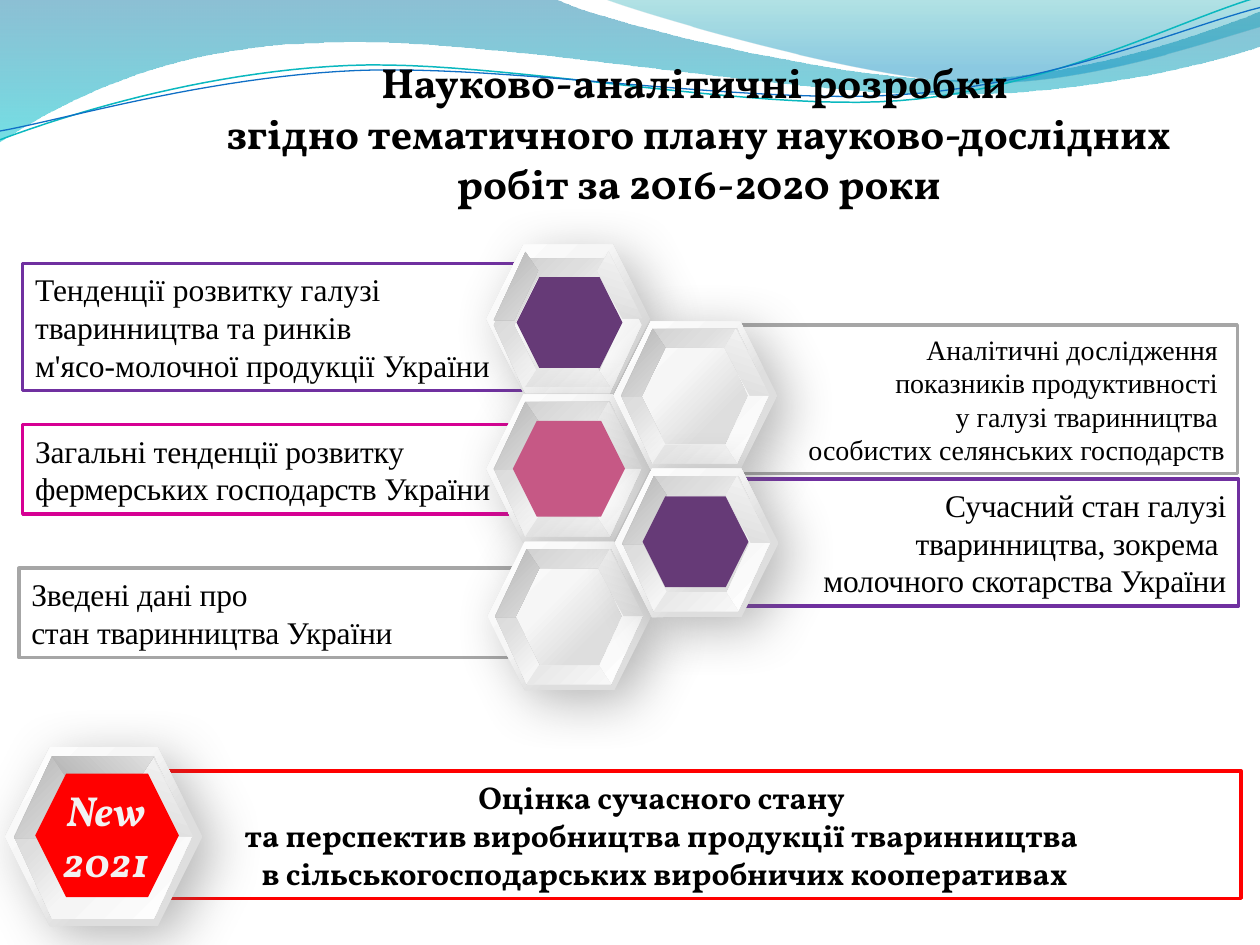
import lxml.etree
import pptx
import pptx.dml.color
import pptx.enum.shapes
import pptx.enum.text
import pptx.oxml.ns
import pptx.util

Inches, Pt = pptx.util.Inches, pptx.util.Pt
RGB = pptx.dml.color.RGBColor.from_string
MSO = pptx.enum.shapes.MSO_SHAPE
ALIGN = pptx.enum.text.PP_ALIGN
ANCHOR = pptx.enum.text.MSO_ANCHOR
qn = pptx.oxml.ns.qn


class Theme:
    serif, display = "Times New Roman", "Vollkorn"
    heading, body, small = 24, 18, 16
    black, white, pale = "000000", "FFFFFF", "F2F2F2"
    grey, purple, magenta, red = "A6A6A6", "7030A0", "D60093", "FF0000"
    plum, rose, shadow = "663A77", "C65885", "696969"
    teal, blue = "0AB8BF", "0F6FC6"
    # Gradient stops: position, colour, opacity in percent
    wave = [(0, "0074A1", 45), (100, "00C6CF", 55)]
    wave_light = [(0, "00A1A9", 30), (80, "008BBF", 45)]
    rim = [(17, "DEDEDE", 100), (37, "E0E0E0", 100), (61, "F6F6F6", 100), (100, "FFFFFF", 100)]
    ring = [(0, "CBCBCB", 100), (32, "DEDEDE", 100), (57, "F5F5F5", 100), (100, "FFFFFF", 100)]
    dark = [(0, "B4B4B4", 100), (100, "DFDFDF", 100)]
    light = [(0, "E6E6E6", 100), (100, "F7F7F7", 100)]
    side = [(0, "DEDEDE", 100), (100, "F4F4F4", 100)]


def set_text(sp, lines, font=Theme.serif, size=Theme.body, color=Theme.black, align=ALIGN.LEFT,
             bold=False, italic=False, spacing=0, anchor=ANCHOR.MIDDLE):
    tf = sp.text_frame
    tf.word_wrap = True
    tf.auto_size = pptx.enum.text.MSO_AUTO_SIZE.NONE
    tf.vertical_anchor = anchor
    for i, line in enumerate(lines):
        p = tf.paragraphs[0] if i == 0 else tf.add_paragraph()
        p.alignment = align
        r = p.add_run()
        r.text = line
        r.font.name, r.font.size = font, Pt(size)
        r.font.bold, r.font.italic = bold, italic
        r.font.color.rgb = RGB(color)
        if spacing:
            r._r.get_or_add_rPr().set("spc", str(round(spacing * 100)))


def set_gradient(sp, stops, angle):
    """Fill without outline; the angle runs clockwise."""
    sp.shadow.inherit = False
    sp.line.fill.background()
    sp.fill.gradient()
    sp.fill.gradient_angle = (360 - angle) % 360
    gs_list = sp._element.spPr.find(qn("a:gradFill")).find(qn("a:gsLst"))
    for gs in list(gs_list):
        gs_list.remove(gs)
    for pos, color, alpha in stops:
        gs = lxml.etree.SubElement(gs_list, qn("a:gs"), pos=str(pos * 1000))
        clr = lxml.etree.SubElement(gs, qn("a:srgbClr"), val=color)
        lxml.etree.SubElement(clr, qn("a:alpha"), val=str(alpha * 1000))


prs = pptx.Presentation()
prs.slide_width, prs.slide_height = Inches(10), Inches(7.5)
s = prs.slides.add_slide(prs.slide_layouts[5])

# Header waves: start, then lines (2 numbers) and Bézier curves (6 numbers)
waves = [
    ((0, 0), [(4.4, -0.01), (4.76, 0.17, 6.64, 0.63, 7.58, 0.63), (8.53, 0.63, 9.58, 0.26, 10, 0.09),
              (10.01, 0.36), (9.83, 0.44, 8.7, 0.76, 7.46, 0.75), (6.22, 0.75, 3.82, 0.28, 2.57, 0.34),
              (1.29, 0.36, 0.46, 0.83, -0.01, 1.13)], Theme.wave, None, 0),
    ((4.79, -0.01), [(5.09, 0.11, 6.82, 0.62, 7.69, 0.65), (8.56, 0.69, 9.61, 0.32, 10, 0.21),
                     (10, 0)], Theme.wave_light, None, 0),
    ((0, 1.11), [(0.48, 0.93, 1.58, 0.57, 2.77, 0.52), (3.95, 0.47, 5.93, 0.89, 7.13, 0.8),
                 (8.33, 0.71, 9.38, 0.15, 9.98, -0.02)], None, Theme.teal, 0.85),
    ((0, 1.04), [(0.47, 0.96, 1.64, 0.61, 2.83, 0.56), (4.03, 0.51, 5.97, 0.84, 7.17, 0.75),
                 (8.36, 0.67, 9.41, 0.21, 10, 0.06)], None, Theme.blue, 0.75),
]
STEPS = 24
for start, segments, stops, color, width in waves:
    points = [start]
    for seg in segments:
        if len(seg) == 2:
            points.append(seg)
            continue
        (x0, y0), (x1, y1, x2, y2, x3, y3) = points[-1], seg
        for i in range(1, STEPS + 1):
            t = i / STEPS
            a, b, c, d = (1 - t) ** 3, 3 * t * (1 - t) ** 2, 3 * t * t * (1 - t), t ** 3
            points.append((a * x0 + b * x1 + c * x2 + d * x3, a * y0 + b * y1 + c * y2 + d * y3))
    points = [(Inches(x), Inches(y)) for x, y in points]
    fb = s.shapes.build_freeform(*points[0])
    fb.add_line_segments(points[1:], close=bool(stops))
    sp = fb.convert_to_shape()
    if stops:
        set_gradient(sp, stops, 90)
    else:
        sp.shadow.inherit = False
        sp.fill.background()
        sp.line.color.rgb, sp.line.width = RGB(color), Pt(width)

# Title, in front of the waves
title = s.shapes.title
title.left, title.top, title.width, title.height = map(Inches, (1.3, 0.4, 8.49, 1.31))
set_text(title, ["Науково-аналітичні розробки ",
                 "згідно тематичного плану науково-дослідних робіт за 2016-2020 роки"],
         font=Theme.display, size=Theme.heading, align=ALIGN.CENTER, bold=True, anchor=ANCHOR.TOP)
s.shapes._spTree.append(title._element)

# Topic panels, the last one for the new topic
panels = [
    ((0.15, 4.51, 3.97, 0.71), Theme.grey, ["Зведені дані про", "стан тваринництва України"],
     dict(spacing=-0.1)),
    ((5.85, 3.8, 3.98, 1.01), Theme.purple,
     ["Сучасний стан галузі тваринництва, зокрема ", "молочного скотарства України"],
     dict(align=ALIGN.RIGHT, spacing=-0.1)),
    ((0.18, 3.37, 4.12, 0.71), Theme.magenta,
     ["Загальні тенденції розвитку фермерських господарств України"], dict(spacing=-0.1)),
    ((5.17, 2.58, 4.65, 1.18), Theme.grey,
     ["Аналітичні дослідження ", "показників продуктивності ", "у галузі тваринництва ",
      "особистих селянських господарств"], dict(align=ALIGN.RIGHT, size=Theme.small)),
    ((0.18, 2.09, 4.3, 1.01), Theme.purple,
     ["Тенденції розвитку галузі", "тваринництва та ринків", "м'ясо-молочної продукції України"], {}),
    ((0.7, 6.12, 9.15, 1.01), Theme.red,
     ["Оцінка сучасного стану ", "та перспектив виробництва продукції тваринництва ",
      "в сільськогосподарських виробничих кооперативах"],
     dict(font=Theme.display, align=ALIGN.CENTER, bold=True)),
]
for box, color, lines, style in panels:
    sp = s.shapes.add_shape(MSO.RECTANGLE, *map(Inches, box))
    sp.shadow.inherit = False
    sp.fill.solid()
    sp.fill.fore_color.rgb = RGB(Theme.white)
    sp.line.color.rgb, sp.line.width = RGB(color), Pt(2)
    set_text(sp, lines, **style)

# Parts of one hexagon frame, measured from its top left corner
presets = {  # shape, box, rotation, stops, angle
    "top": (MSO.TRAPEZOID, (0.31, 0.06, 0.67, 0.15), 180, Theme.dark, 135),
    "rim": (MSO.HEXAGON, (0, 0, 1.3, 1.18), 0, Theme.rim, 225),
    "bottom": (MSO.TRAPEZOID, (0.31, 0.98, 0.67, 0.15), 0, Theme.light, 45),
}
outlines = {  # contours, stops, angle
    "ring": ([[(0.41, 0.21), (0.22, 0.59), (0.41, 0.98), (0.89, 0.98), (1.07, 0.59), (0.89, 0.21)],
              [(0.31, 0.06), (0.98, 0.06), (1.23, 0.59), (0.98, 1.13), (0.31, 1.13), (0.06, 0.59)]],
             Theme.ring, 45),
    "right": ([[(0.97, 0.06), (0.88, 0.21), (1.08, 0.59), (1.24, 0.59)]], Theme.side, 288),
    "left": ([[(0.31, 0.06), (0.41, 0.21), (0.22, 0.6), (0.06, 0.6)]], Theme.dark, 45),
}
small_order = ["top", "rim", "ring", "bottom", "right", "left"]
badge_order = ["bottom", "rim", "ring", "right", "left", "top"]
frames = [  # left, top, scale, ring drop, part order
    (3.86, 1.94, 1, 0.05, small_order),
    (3.86, 3.13, 1, 0, small_order),
    (4.87, 2.55, 1, 0, small_order),
    (3.87, 4.3, 1, 0, small_order),
    (4.88, 3.72, 1, 0, small_order),
    (0.04, 5.93, 1.205, 0, badge_order),
]
for left, top, scale, drop, order in frames:
    grp = s.shapes.add_group_shape()
    for part in order:
        if part in presets:
            kind, (x, y, w, h), rotation, stops, angle = presets[part]
            sp = grp.shapes.add_shape(kind, Inches(left + x * scale), Inches(top + y * scale),
                                      Inches(w * scale), Inches(h * scale))
            sp.rotation = rotation
            if kind == MSO.TRAPEZOID:
                sp.adjustments[0] = 0.66
        else:
            contours, stops, angle = outlines[part]
            y0 = top + (drop if part == "ring" else 0)
            contours = [[(Inches(left + x * scale), Inches(y0 + y * scale)) for x, y in c]
                        for c in contours]
            fb = grp.shapes.build_freeform(*contours[0][0])
            for contour in contours:
                if contour is not contours[0]:
                    fb.move_to(*contour[0])
                fb.add_line_segments(contour[1:], close=True)
            sp = fb.convert_to_shape()
        set_gradient(sp, stops, angle)
        if part == "rim":
            shadow = lxml.etree.SubElement(
                sp._element.spPr.find(qn("a:effectLst")), qn("a:outerShdw"), blurRad=str(Pt(30)),
                dist=str(Pt(10)), dir=str(40 * 60000), algn="tl", rotWithShape="0")
            clr = lxml.etree.SubElement(shadow, qn("a:srgbClr"), val=Theme.shadow)
            lxml.etree.SubElement(clr, qn("a:alpha"), val="47000")

# Coloured hexagon centres
for box, color in [((4.1, 2.2, 0.84, 0.72), Theme.plum), ((4.07, 3.34, 0.89, 0.76), Theme.rose),
                   ((5.1, 3.94, 0.84, 0.72), Theme.plum), ((0.28, 6.14, 1.14, 0.98), Theme.red)]:
    sp = s.shapes.add_shape(MSO.HEXAGON, *map(Inches, box))
    sp.shadow.inherit = False
    sp.fill.solid()
    sp.fill.fore_color.rgb = RGB(color)
    sp.line.fill.background()

# Badge label
label = s.shapes.add_textbox(*map(Inches, (0.37, 6.23, 0.94, 0.81)))
tf = label.text_frame
tf.margin_left = tf.margin_right = tf.margin_top = tf.margin_bottom = 0
set_text(label, ["New", "2021"], font=Theme.display, size=Theme.heading, color=Theme.pale,
         align=ALIGN.CENTER, bold=True, italic=True, anchor=ANCHOR.TOP)

prs.save("out.pptx")
